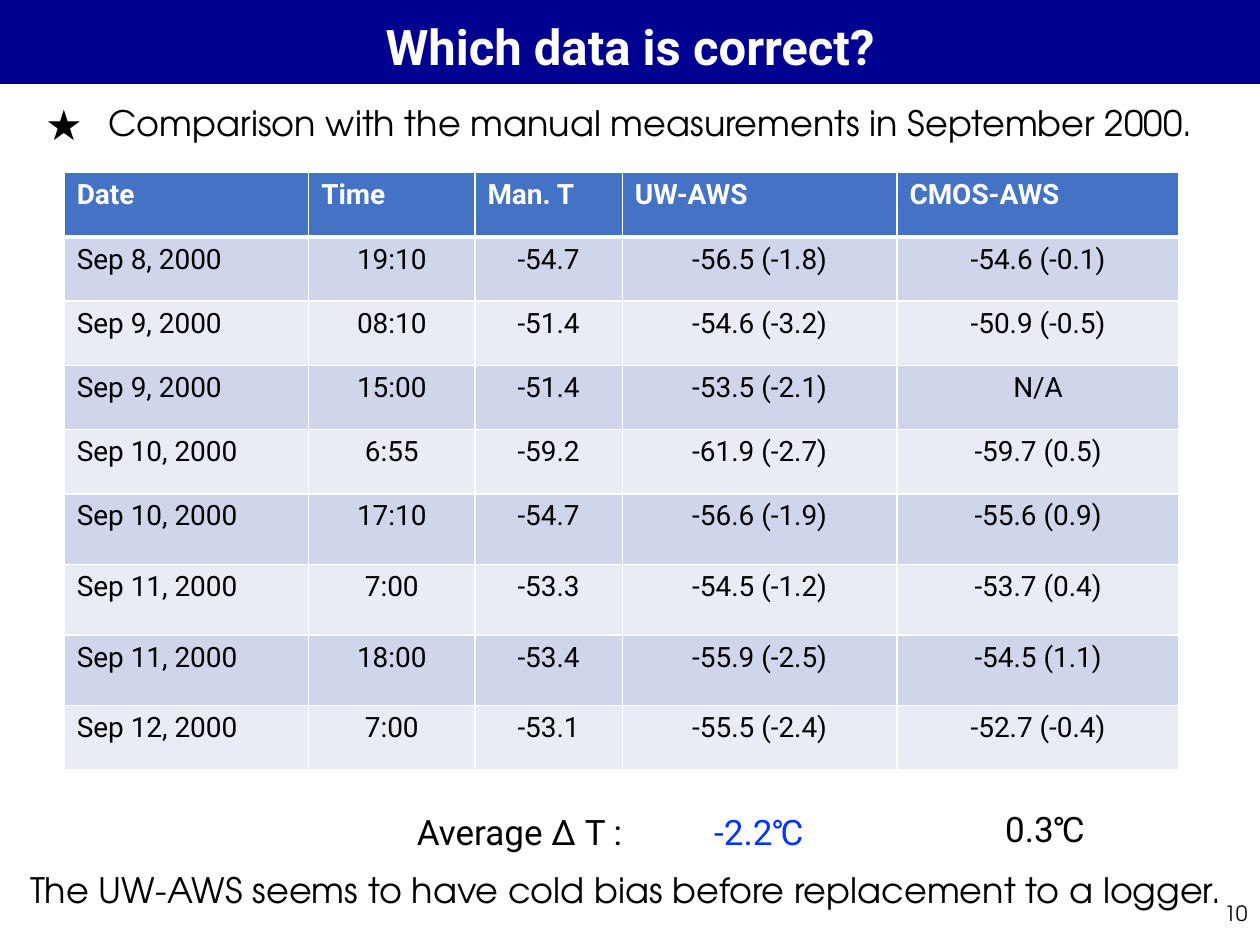
from lxml.etree import SubElement
from pptx import Presentation
from pptx.dml.color import RGBColor
from pptx.enum.shapes import MSO_SHAPE as Shape
from pptx.enum.text import MSO_ANCHOR as Anchor, PP_ALIGN as Align
from pptx.oxml.ns import qn
from pptx.util import Inches, Pt

COLORS = {
    "navy": "000090",
    "white": "FFFFFF",
    "black": "000000",
    "blue": "0432FF",
    "header": "4472C4",
    "odd": "CFD5EA",
    "even": "E9EBF5",
}
SANS = "Roboto"
GEOMETRIC = "TeX Gyre Adventor"

COLUMN_WIDTHS = [1.94, 1.32, 1.17, 2.18, 2.24]
ROW_HEIGHTS = [0.51] * 5 + [0.56] * 3 + [0.51]
MEASUREMENTS = [
    ["Date", "Time", "Man. T", "UW-AWS", "CMOS-AWS"],
    ["Sep 8, 2000", "19:10", "-54.7", "-56.5 (-1.8)", "-54.6 (-0.1)"],
    ["Sep 9, 2000", "08:10", "-51.4", "-54.6 (-3.2)", "-50.9 (-0.5)"],
    ["Sep 9, 2000", "15:00", "-51.4", "-53.5 (-2.1)", "N/A"],
    ["Sep 10, 2000", "6:55", "-59.2", "-61.9 (-2.7)", "-59.7 (0.5)"],
    ["Sep 10, 2000", "17:10", "-54.7", "-56.6 (-1.9)", "-55.6 (0.9)"],
    ["Sep 11, 2000", "7:00", "-53.3", "-54.5 (-1.2)", "-53.7 (0.4)"],
    ["Sep 11, 2000", "18:00", "-53.4", "-55.9 (-2.5)", "-54.5 (1.1)"],
    ["Sep 12, 2000", "7:00", "-53.1", "-55.5 (-2.4)", "-52.7 (-0.4)"],
]


def color(name):
    return RGBColor.from_string(COLORS[name])


def write(frame, text, size=20, font=SANS, ink="black", bold=False, align=Align.LEFT):
    para = frame.paragraphs[0]
    para.alignment = align
    span = para.add_run()
    span.text = text
    span.font.size = Pt(size)
    span.font.name = font
    span.font.bold = bold
    span.font.color.rgb = color(ink)
    return para


def paint(shape, name):
    shape.fill.solid()
    shape.fill.fore_color.rgb = color(name)
    shape.line.color.rgb = color(name)
    shape.line.width = Pt(0.75)


def add_title(slide, text):
    title = slide.shapes.title
    title.left, title.top = Inches(0), Inches(0.16)
    title.width, title.height = Inches(10), Inches(0.5)
    paint(title, "navy")
    frame = title.text_frame
    frame.word_wrap = True
    frame.vertical_anchor = Anchor.MIDDLE
    para = write(frame, text, size=28, ink="white", bold=True, align=Align.CENTER)
    para.line_spacing = 0.8

    band = slide.shapes.add_shape(Shape.RECTANGLE, 0, 0, Inches(10), Inches(0.37))
    band.shadow.inherit = False
    paint(band, "navy")
    title.element.addprevious(band.element)


def add_text(slide, text, left, top, width, height=0.44, **style):
    box = slide.shapes.add_textbox(*map(Inches, (left, top, width, height)))
    box.text_frame.word_wrap = True
    write(box.text_frame, text, **style)


def add_borders(cell, widths):
    properties = cell._tc.get_or_add_tcPr()
    for side, width in widths.items():
        line = SubElement(properties, qn(f"a:ln{side}"), w=str(Pt(width)))
        fill = SubElement(line, qn("a:solidFill"))
        SubElement(fill, qn("a:srgbClr"), val=COLORS["white"])


def add_measurements(slide):
    table = slide.shapes.add_table(
        len(ROW_HEIGHTS), len(COLUMN_WIDTHS),
        Inches(0.51), Inches(1.37),
        Inches(sum(COLUMN_WIDTHS)), Inches(sum(ROW_HEIGHTS)),
    ).table
    for column, width in zip(table.columns, COLUMN_WIDTHS):
        column.width = Inches(width)
    for row, height in zip(table.rows, ROW_HEIGHTS):
        row.height = Inches(height)

    for r, values in enumerate(MEASUREMENTS):
        header = r == 0
        shade = "header" if header else "odd" if r % 2 else "even"
        for c, value in enumerate(values):
            cell = table.cell(r, c)
            add_borders(cell, {"L": 1, "R": 1, "T": 3 if r == 1 else 1, "B": 3 if header else 1})
            cell.fill.solid()
            cell.fill.fore_color.rgb = color(shade)
            write(
                cell.text_frame, value, size=16, bold=header,
                ink="white" if header else "black",
                align=Align.LEFT if header or c == 0 else Align.CENTER,
            )


def main():
    deck = Presentation()
    deck.slide_width, deck.slide_height = Inches(10), Inches(7.5)
    slide = deck.slides.add_slide(deck.slide_layouts[5])

    add_title(slide, "Which data is correct?")
    add_text(slide, "10", 7.75, 7.1, 2.25, 0.4, size=12, font=GEOMETRIC, align=Align.RIGHT)
    add_measurements(slide)
    add_text(slide, "Comparison with the manual measurements in September 2000.",
             0.76, 0.76, 9.24, font=GEOMETRIC)
    add_text(slide, "★", 0.26, 0.73, 0.6, 0.5, size=24)
    add_text(slide, "Average Δ T :", 3.21, 6.38, 1.98)
    add_text(slide, "-2.2℃", 5.57, 6.38, 1.15, ink="blue")
    add_text(slide, "0.3℃", 7.88, 6.36, 1.06)
    add_text(slide, "The UW-AWS seems to have cold bias before replacement to a logger.",
             0.14, 6.84, 9.74, font=GEOMETRIC)
    deck.save("out.pptx")


if __name__ == "__main__":
    main()
